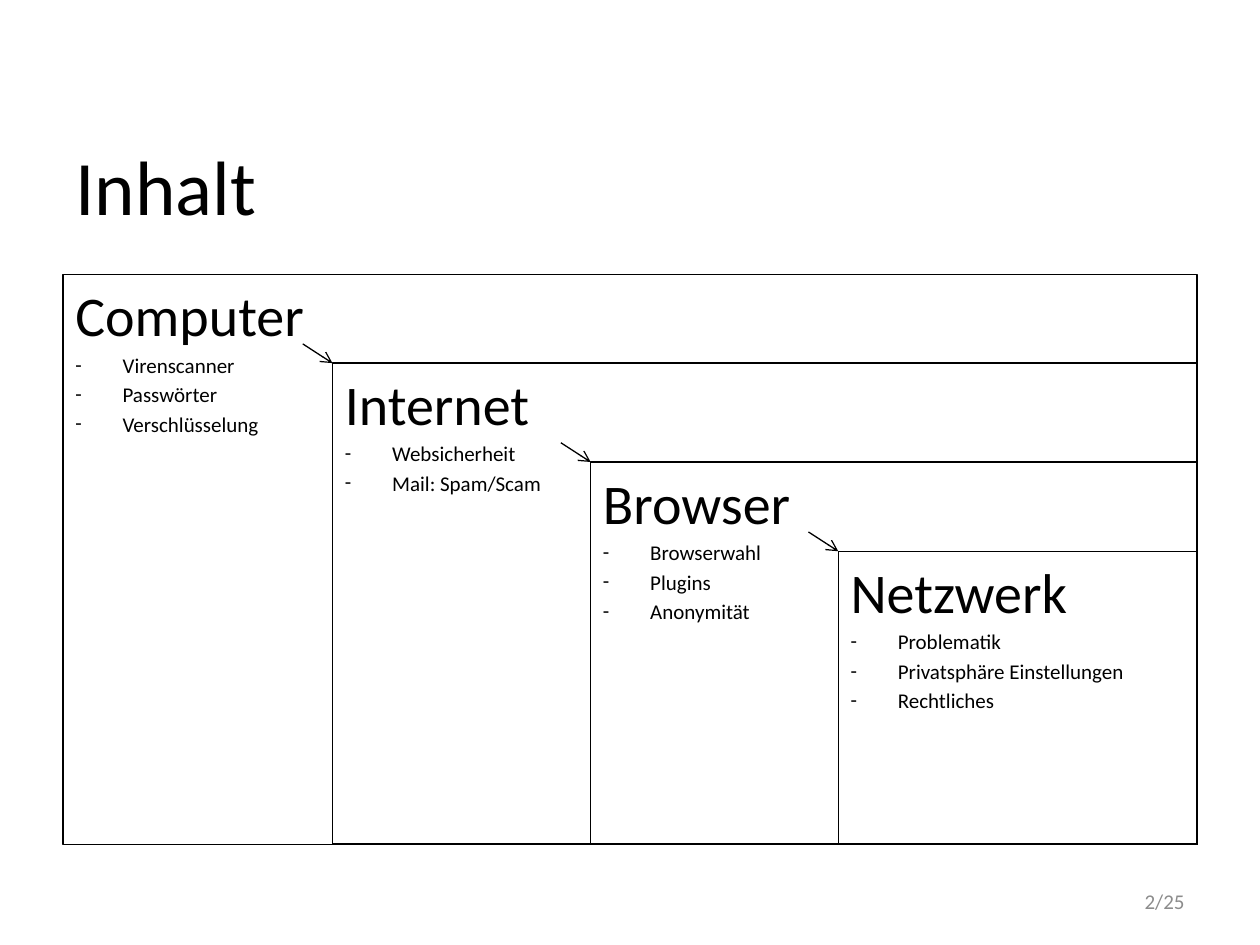
from lxml.etree import SubElement
from pptx import Presentation
from pptx.dml.color import RGBColor
from pptx.enum.shapes import MSO_CONNECTOR as Connector, MSO_SHAPE as Shape
from pptx.enum.text import MSO_ANCHOR as Anchor, PP_ALIGN as Align
from pptx.oxml.ns import qn
from pptx.util import Pt

BLACK = RGBColor(0x00, 0x00, 0x00)
GRAY = RGBColor(0x8C, 0x8C, 0x8C)
FONT = "Calibri"
RIGHT, BOTTOM = 684, 482.4
ARROW_WIDTH, ARROW_HEIGHT = 17, 11
INDENT = 27

TOPICS = [
    (36, 157, "Computer", ["Virenscanner", "Passwörter", "Verschlüsselung"]),
    (190, 207.5, "Internet", ["Websicherheit", "Mail: Spam/Scam"]),
    (337.5, 264, "Browser", ["Browserwahl", "Plugins", "Anonymität"]),
    (479, 315, "Netzwerk",
     ["Problematik", "Privatsphäre Einstellungen", "Rechtliches"]),
]


def style_text(para, size, color=BLACK):
    for span in para.runs:
        span.font.name = FONT
        span.font.size = Pt(size)
        span.font.color.rgb = color


def add_label(page, left, top, width, height, text, size, color, align):
    box = page.shapes.add_textbox(Pt(left), Pt(top), Pt(width), Pt(height))
    frame = box.text_frame
    frame.word_wrap = True
    frame.vertical_anchor = Anchor.MIDDLE
    frame.text = text
    frame.paragraphs[0].alignment = align
    style_text(frame.paragraphs[0], size, color)


def add_dash(para):
    props = para._p.get_or_add_pPr()
    props.set("marL", str(Pt(INDENT)))
    props.set("indent", str(-Pt(INDENT)))
    SubElement(props, qn("a:buFont"), typeface=FONT)
    SubElement(props, qn("a:buChar"), char="-")


def add_topic(page, left, top, width, height, heading, items):
    box = page.shapes.add_shape(
        Shape.RECTANGLE, Pt(left), Pt(top), Pt(width), Pt(height))
    box.shadow.inherit = False
    box.fill.background()
    box.line.color.rgb = BLACK
    box.line.width = Pt(0.75)
    frame = box.text_frame
    frame.word_wrap = True
    frame.vertical_anchor = Anchor.TOP
    frame.text = heading
    frame.paragraphs[0].alignment = Align.LEFT
    style_text(frame.paragraphs[0], 32)
    for item in items:
        para = frame.add_paragraph()
        para.text = item
        para.alignment = Align.LEFT
        para.space_before = Pt(2.4)
        add_dash(para)
        style_text(para, 12)


def add_corner_arrow(page, left, top):
    arrow = page.shapes.add_connector(
        Connector.STRAIGHT, Pt(left - ARROW_WIDTH), Pt(top - ARROW_HEIGHT),
        Pt(left), Pt(top))
    arrow.line.color.rgb = BLACK
    arrow.line.width = Pt(0.75)
    SubElement(arrow.line._get_or_add_ln(), qn("a:tailEnd"), type="arrow")
    SubElement(arrow._element.spPr, qn("a:effectLst"))


def add_nested_topics(page, right, bottom):
    for index, (left, top, heading, items) in enumerate(TOPICS):
        add_topic(page, left, top, right - left, bottom - top, heading, items)
        if index:
            add_corner_arrow(page, left, top)


def main():
    deck = Presentation()
    deck.slide_width, deck.slide_height = Pt(720), Pt(540)
    page = deck.slides.add_slide(deck.slide_layouts[6])
    add_label(page, 36, 60.5, 648, 90, "Inhalt", 44, BLACK, Align.LEFT)
    add_nested_topics(page, RIGHT, BOTTOM)
    add_label(page, 516, 500.5, 168, 28.75, "2/25", 12, GRAY, Align.RIGHT)
    deck.save("out.pptx")


if __name__ == "__main__":
    main()
